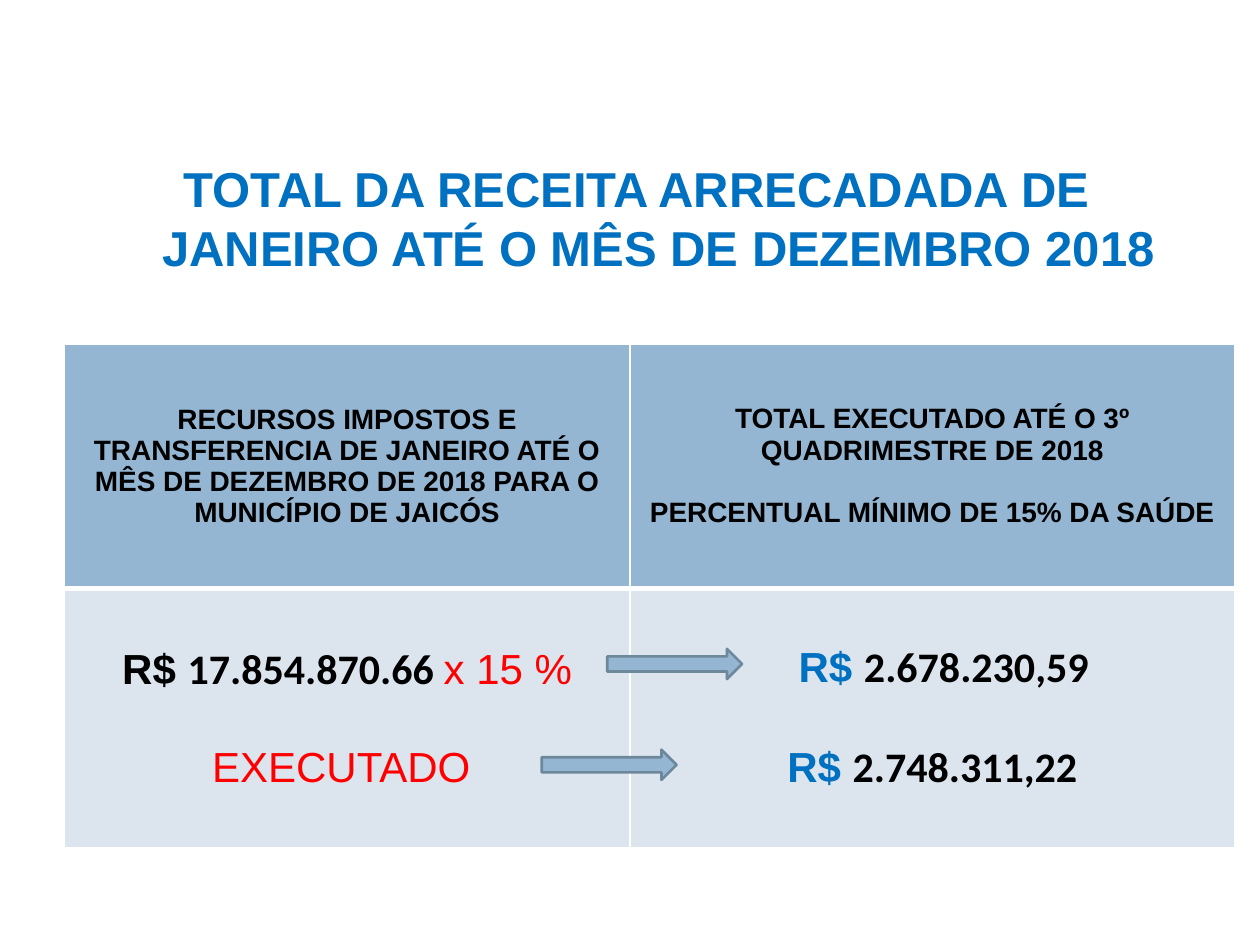
from dataclasses import dataclass

from lxml.etree import SubElement
from pptx import Presentation
from pptx.dml.color import RGBColor
from pptx.enum.shapes import MSO_SHAPE as Shape
from pptx.enum.text import MSO_ANCHOR as Anchor, PP_ALIGN as Align
from pptx.oxml.ns import qn
from pptx.util import Inches, Pt


@dataclass(frozen=True)
class Theme:
    blue: str = "0070C0"
    black: str = "000000"
    red: str = "FF0000"
    white: str = "FFFFFF"
    header: str = "94B6D2"
    body: str = "DCE5EE"
    outline: str = "6D879B"
    font: str = "Arial"
    figure_font: str = "Calibri"
    title_size: int = 28
    header_size: int = 16
    body_size: int = 24


THEME = Theme()


def rgb(value):
    return RGBColor.from_string(value)


def add_run(paragraph, text, size, color=THEME.black, bold=True, font=THEME.font):
    run = paragraph.add_run()
    run.text = text
    run.font.size = Pt(size)
    run.font.name = font
    run.font.bold = bold
    run.font.color.rgb = rgb(color)


def indent(paragraph, left, first=0):
    properties = paragraph._p.get_or_add_pPr()
    properties.set("marL", str(left))
    properties.set("indent", str(first))


def add_title(slide, left, top, width, height):
    frame = slide.shapes.add_textbox(left, top, width, height).text_frame
    frame.word_wrap = True
    title = frame.paragraphs[0]
    title.alignment = Align.CENTER
    indent(title, Inches(0.35), -Inches(0.35))
    add_run(title, "TOTAL DA RECEITA ARRECADADA DE JANEIRO ATÉ O MÊS DE DEZEMBRO 2018",
            THEME.title_size, THEME.blue)


def set_borders(cell, **widths):
    properties = cell._tc.get_or_add_tcPr()
    for position, side in enumerate("LRTB"):
        line = properties.makeelement(qn(f"a:ln{side}"), w=str(Pt(widths.get(side, 1))))
        fill = SubElement(line, qn("a:solidFill"))
        SubElement(fill, qn("a:srgbClr"), val=THEME.white)
        properties.insert(position, line)


def fill_cell(cell, fill, size, gap, lines):
    cell.fill.solid()
    cell.fill.fore_color.rgb = rgb(fill)
    cell.vertical_anchor = Anchor.MIDDLE
    frame = cell.text_frame
    for index, runs in enumerate(lines):
        paragraph = frame.add_paragraph() if index else frame.paragraphs[0]
        paragraph.alignment = Align.CENTER
        if index:
            paragraph.space_before = Pt(gap)
        for text, style in runs:
            add_run(paragraph, text, size, **style)


def add_revenue_table(slide, left, top, columns, rows):
    table = slide.shapes.add_table(len(rows), len(columns), left, top,
                                   sum(columns), sum(rows)).table
    for column, width in zip(table.columns, columns):
        column.width = width
    for row, height in zip(table.rows, rows):
        row.height = height

    headings = [
        ["RECURSOS IMPOSTOS E TRANSFERENCIA DE JANEIRO ATÉ O MÊS DE DEZEMBRO "
         "DE 2018 PARA O MUNICÍPIO DE JAICÓS"],
        ["TOTAL EXECUTADO ATÉ O 3º QUADRIMESTRE DE 2018",
         "PERCENTUAL MÍNIMO DE 15% DA SAÚDE"],
    ]
    for column, heading in enumerate(headings):
        cell = table.cell(0, column)
        fill_cell(cell, THEME.header, THEME.header_size, 18,
                  [[(text, {})] for text in heading])
        set_borders(cell, B=3)

    figure = {"font": THEME.figure_font}
    red = {"color": THEME.red, "bold": False}
    blue = {"color": THEME.blue}
    amounts = [
        [[("R$ ", {}), ("17.854.870.66 ", figure), ("x 15 %", red)],
         [("EXECUTADO ", red)]],
        [[("R$ ", blue), ("2.678.230,59", figure)],
         [("R$ ", blue), ("2.748.311,22", figure)]],
    ]
    for column, lines in enumerate(amounts):
        cell = table.cell(1, column)
        fill_cell(cell, THEME.body, THEME.body_size, 28, lines)
        set_borders(cell, T=3)
    indent(table.cell(1, 1).text_frame.paragraphs[0], Pt(13))


def add_arrow(slide, left, top, width, height):
    arrow = slide.shapes.add_shape(Shape.RIGHT_ARROW, left, top, width, height)
    arrow.shadow.inherit = False
    arrow.fill.solid()
    arrow.fill.fore_color.rgb = rgb(THEME.header)
    arrow.line.color.rgb = rgb(THEME.outline)
    arrow.line.width = Pt(1.5)


def main():
    deck = Presentation()
    deck.slide_width, deck.slide_height = Inches(10), Inches(7.5)
    slide = deck.slides.add_slide(deck.slide_layouts[6])
    add_title(slide, Inches(0.55), Inches(1.21), Inches(9), Inches(1.1))
    add_revenue_table(slide, Inches(0.51), Inches(2.73),
                      [Inches(4.49), Inches(4.8)], [Inches(1.94), Inches(2.06)])
    for left, top in ((4.3, 5.95), (4.82, 5.15)):
        add_arrow(slide, Inches(left), Inches(top), Inches(1.07), Inches(0.24))
    deck.save("out.pptx")


if __name__ == "__main__":
    main()
